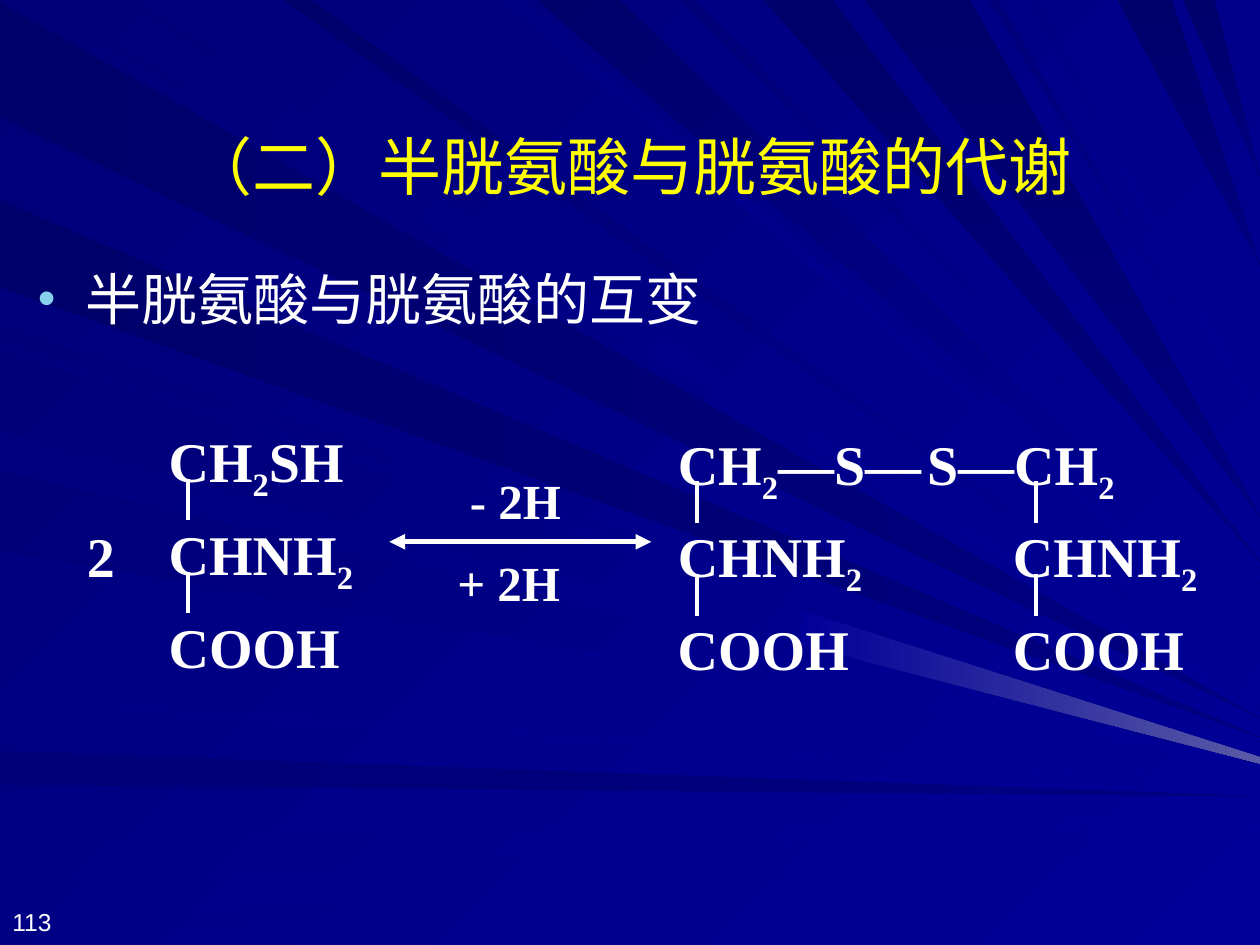
from lxml import etree
from pptx import Presentation
from pptx.dml.color import RGBColor
from pptx.enum.shapes import MSO_CONNECTOR
from pptx.enum.text import MSO_ANCHOR, MSO_AUTO_SIZE, PP_ALIGN
from pptx.oxml.ns import qn
from pptx.util import Pt

STRAIGHT = MSO_CONNECTOR.STRAIGHT
TOP, MIDDLE, BOTTOM = MSO_ANCHOR.TOP, MSO_ANCHOR.MIDDLE, MSO_ANCHOR.BOTTOM
LEFT, CENTER = PP_ALIGN.LEFT, PP_ALIGN.CENTER
NO_FIT = MSO_AUTO_SIZE.NONE

COLORS = {
    "white": "FFFFFF",
    "title": "FFFF00",
    "bullet": "86D1EC",
    "deep": "00006B",
    "dark": "000078",
    "navy": "000080",
    "mid": "000085",
    "light": "000099",
    "glow": "5A5AA6",
}
CJK, SERIF, SANS = "Noto Sans CJK SC", "Times New Roman", "Arial"
RAY_UNIT = Pt(0.72)
RIGHT_EDGE = 1000
ROW_STEP = 53

LEFT_RAYS = [
    (2, 93, 570, "deep", "navy"),
    (596, 623, 632, "dark", "navy"),
    (665, 704, 648, "mid", "light"),
    (735, 750, 662, "mid", "light"),
    (258, 270, 589, "dark", "light"),
    (159, 228, 585, "deep", "navy"),
    (278, 342, 600, "dark", "light"),
    (374, 437, 606, "dark", "light"),
    (552, 560, 622, "mid", "light"),
]
TOP_RAYS = [
    (26, 101, 563, "dark", "light"),
    (398, 416, 518, "mid", "light"),
    (426, 492, 493, "deep", "light"),
    (540, 552, 463, "dark", "light"),
    (606, 661, 446, "deep", "navy"),
    (887, 930, 210, "deep", "navy"),
    (939, 964, 140, "deep", "navy"),
    (225, 247, 550, "deep", "light"),
    (686, 770, 410, "deep", "navy"),
    (785, 792, 357, "dark", "light"),
    (815, 824, 336, "mid", "light"),
]
GLOW_RAY = [(637, 485), (633, 511), (1000, 606), (1000, 601)]


def rgb(name):
    return RGBColor.from_string(COLORS[name])


def paint(fill, start, end, angle):
    fill.gradient()
    fill.gradient_angle = (360 - angle) % 360
    for stop, color in zip(fill.gradient_stops, (start, end)):
        stop.color.rgb = rgb(color)


def add_ray(group, points, start, end, angle):
    builder = group.shapes.build_freeform(*points[0], scale=RAY_UNIT)
    builder.add_line_segments(points[1:], close=True)
    sp = builder.convert_to_shape()
    sp.shadow.inherit = False
    sp.line.fill.background()
    paint(sp.fill, start, end, angle)


def add_rays(s):
    group = s.shapes.add_group_shape()
    for a, b, tip, start, end in LEFT_RAYS:
        angle = 0 if end == "navy" else 45
        add_ray(group, [(0, a), (0, b), (RIGHT_EDGE, tip)], start, end, angle)
    for a, b, tip, start, end in TOP_RAYS:
        angle = 90 if end == "navy" else 45
        add_ray(group, [(a, 0), (b, 0), (RIGHT_EDGE, tip)], start, end, angle)
    add_ray(group, GLOW_RAY, "light", "glow", 0)
    s.shapes._spTree.insert(2, group._element)


def write(sp, text, size=32, font=SERIF, color="white", bold=False,
          align=LEFT, anchor=TOP, sub=None):
    tf = sp.text_frame
    tf.word_wrap = True
    tf.auto_size = NO_FIT
    tf.vertical_anchor = anchor
    p = tf.paragraphs[0]
    p.alignment = align
    p.space_before = Pt(0)
    for part in text.partition(sub) if sub else [text]:
        if not part:
            continue
        r = p.add_run()
        r.text = part
        r.font.size = Pt(size)
        r.font.name = font
        r.font.bold = bold
        r.font.color.rgb = rgb(color)
        rPr = r._r.get_or_add_rPr()
        if font == CJK:
            etree.SubElement(rPr, qn("a:ea"), typeface=font)
        if part == sub:
            rPr.set("baseline", "-25000")


def place(sp, x, y, w, h):
    sp.left, sp.top, sp.width, sp.height = Pt(x), Pt(y), Pt(w), Pt(h)


def add_bullet(sp):
    pPr = sp.text_frame.paragraphs[0]._p.get_or_add_pPr()
    pPr.set("marL", str(Pt(27)))
    pPr.set("indent", str(Pt(-27)))
    clr = etree.SubElement(pPr, qn("a:buClr"))
    etree.SubElement(clr, qn("a:srgbClr"), val=COLORS["bullet"])
    etree.SubElement(pPr, qn("a:buSzPct"), val="90000")
    etree.SubElement(pPr, qn("a:buChar"), char="•")


def add_label(s, text, x, y, w, h=45.4, **fmt):
    sp = s.shapes.add_textbox(Pt(x), Pt(y), Pt(w), Pt(h))
    write(sp, text, **fmt)
    return sp


def add_formula(s, text, x, y, w, h=45.4, size=32, sub=None):
    sp = add_label(s, text, x, y, w, h, size=size, bold=True, sub=sub)
    sp.text_frame.margin_top = Pt(7.6)
    sp.text_frame.margin_bottom = Pt(0)


def add_line(s, x1, y1, x2, y2, width=2.25, arrows=False):
    line = s.shapes.add_connector(STRAIGHT, Pt(x1), Pt(y1), Pt(x2), Pt(y2))
    line.line.color.rgb = rgb("white")
    line.line.width = Pt(width)
    if arrows:
        ln = line.line._get_or_add_ln()
        for tag in ("a:headEnd", "a:tailEnd"):
            etree.SubElement(ln, qn(tag), type="triangle")
    etree.SubElement(line._element.spPr, qn("a:effectLst"))


def add_molecule(s, head, x, y, head_x, head_w, bond_dx=18):
    add_formula(s, head, head_x, y, head_w, sub="2")
    add_formula(s, "CHNH2", x, y + ROW_STEP, 130.3, sub="2")
    add_formula(s, "COOH", x, y + 2 * ROW_STEP, 120.2)
    for row in range(2):
        top = y + 37.4 + row * ROW_STEP
        add_line(s, x + bond_dx, top, x + bond_dx, top + 23.8)


def main():
    prs = Presentation()
    prs.slide_width, prs.slide_height = Pt(720), Pt(540)
    s = prs.slides.add_slide(prs.slide_layouts[1])
    paint(s.background.fill, "dark", "light", 45)
    add_rays(s)

    title, body = s.placeholders
    place(title, 54, 49.7, 612, 90)
    write(title, "（二）半胱氨酸与胱氨酸的代谢", size=36, font=CJK, color="title",
          align=CENTER, anchor=MIDDLE)
    place(body, 14.4, 147.6, 612, 59.8)
    write(body, "半胱氨酸与胱氨酸的互变", font=CJK)
    add_bullet(body)

    add_molecule(s, "CH2—S—", 380.2, 237.6, 380.2, 162)
    add_molecule(s, "S—CH2", 571.7, 237.6, 522.7, 144, bond_dx=20.2)
    add_molecule(s, "CH2SH", 89.3, 236.2, 89.3, 120.2)
    add_formula(s, "2", 42.5, 290.2, 41.8)

    add_line(s, 222.5, 309.6, 372.2, 309.6, width=3, arrows=True)
    add_formula(s, "- 2H", 261.4, 261.4, 84.2, 41, size=28)
    add_formula(s, "+ 2H", 254.2, 308.2, 90, 41, size=28)
    add_label(s, "113", 0, 502.6, 70.6, 36, size=14, font=SANS, anchor=BOTTOM)

    prs.save("out.pptx")


if __name__ == "__main__":
    main()
